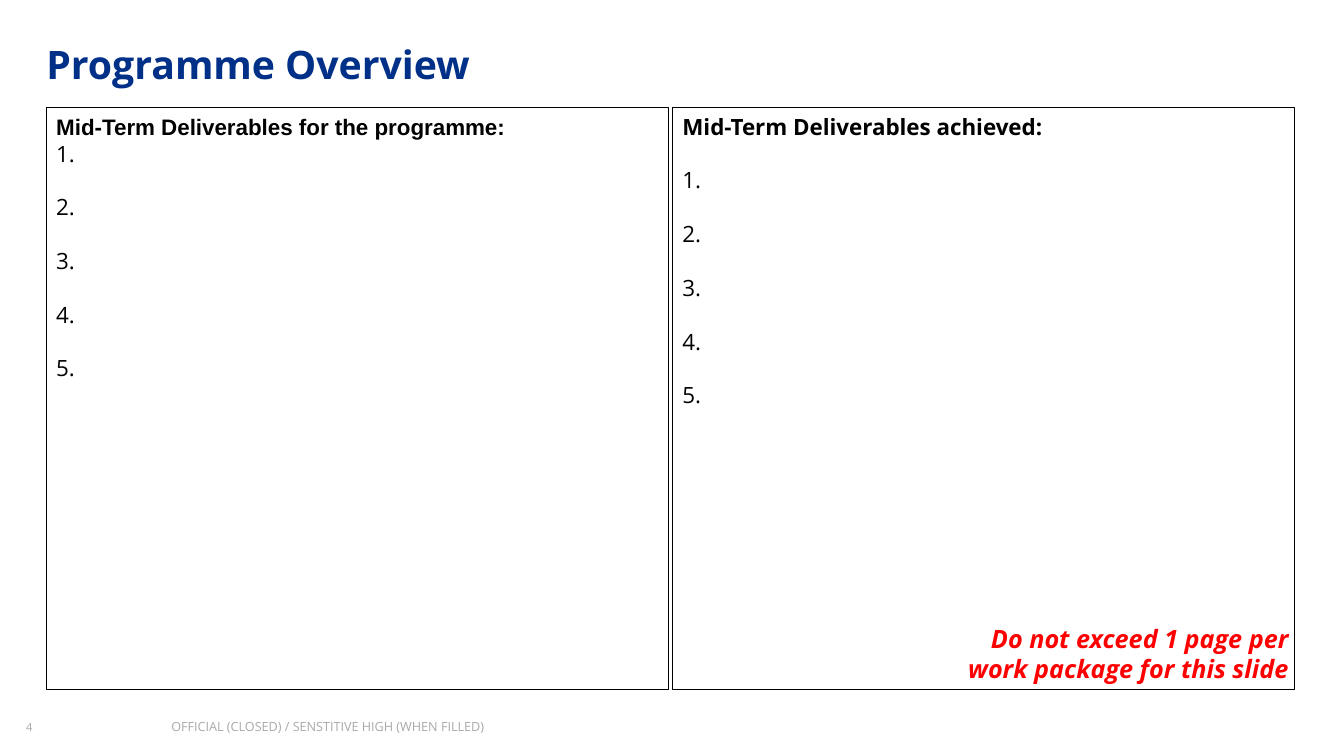
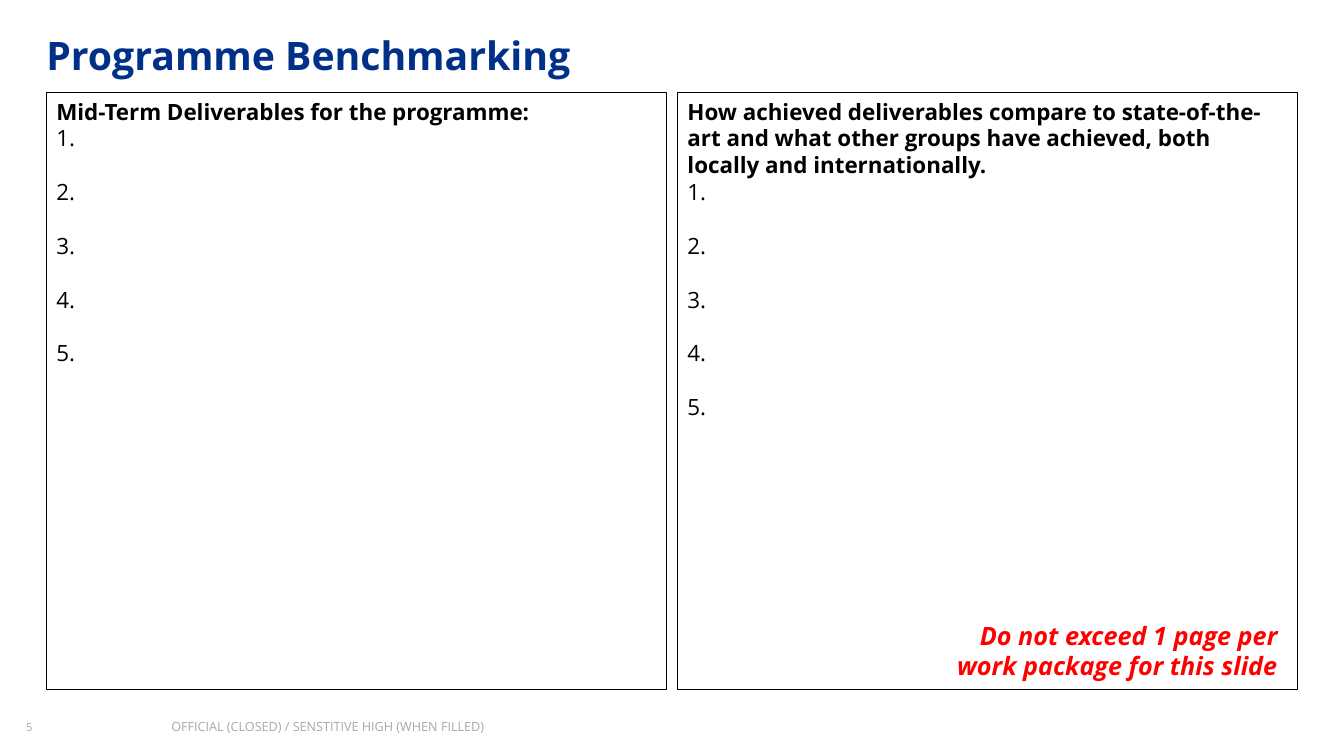
from pptx import Presentation, util as u
from pptx.dml.color import RGBColor
from pptx.enum import shapes, text

HUES = {"title": "003087", "ink": "000000", "note": "FF0000", "foot": "ABA8A8"}
FONT = "Open Sans"
PX = 9144  # 100 px to the inch
GAP = 19.2  # one line of list text, in points
MARK = "OFFICIAL (CLOSED) / SENSTITIVE HIGH (WHEN FILLED)"
NOTE = "Do not exceed 1 page per work package for this slide"
GOALS = "Mid-Term Deliverables for the programme:"
ITEMS = [f"{n}." for n in range(1, 6)]


def write(para, words, size=16, hue="ink", bold=False, italic=False,
          font=FONT, align=text.PP_ALIGN.LEFT, before=0, lines=None):
    """Put one formatted run into a paragraph."""
    para.alignment = align
    para.space_before = u.Pt(before)
    if lines:
        para.line_spacing = lines
    run = para.add_run()
    run.text = words
    face = run.font
    face.name, face.size = font, u.Pt(size)
    face.bold, face.italic = bold, italic
    face.color.rgb = RGBColor.from_string(HUES[hue])


class Deck:
    def __init__(self):
        self.prs = Presentation()
        self.prs.slide_width, self.prs.slide_height = self.px(1333, 750)
        self.slide = None

    def px(self, *sizes):
        return [u.Emu(size * PX) for size in sizes]

    def frame(self, shape, pad=None):
        """Set up wrapped, top-anchored text; pad is one inset for all sides."""
        body = shape.text_frame
        body.word_wrap = True
        body.auto_size = text.MSO_AUTO_SIZE.NONE
        body.vertical_anchor = text.MSO_ANCHOR.TOP
        if pad is not None:
            body.margin_left = body.margin_right = u.Emu(pad * PX)
            body.margin_top = body.margin_bottom = u.Emu(pad * PX)
        return body

    def label(self, words, box, pad=None, **style):
        shape = self.slide.shapes.add_textbox(*self.px(*box))
        write(self.frame(shape, pad).paragraphs[0], words, **style)

    def page(self, num, title, top):
        """Start a slide with its title, number and marking."""
        self.slide = self.prs.slides.add_slide(self.prs.slide_layouts[5])
        head = self.slide.shapes.title
        head.left, head.top, head.width, head.height = self.px(46, top, 1194, 52)
        write(self.frame(head, 0).paragraphs[0], title, size=28, hue="title",
              bold=True, lines=1.1)
        self.label(str(num), (26, 713, 79, 19), 0, size=8, hue="foot", lines=1.1)
        self.label(MARK, (170, 713, 533, 19), 0, size=9, hue="foot")

    def panel(self, head, box, font=FONT, first=0):
        """Outlined box with a bold heading and a numbered list."""
        shape = self.slide.shapes.add_shape(shapes.MSO_SHAPE.RECTANGLE, *self.px(*box))
        shape.shadow.inherit = False
        shape.fill.background()
        shape.line.color.rgb = RGBColor.from_string(HUES["ink"])
        shape.line.width = u.Pt(0.75)
        body = self.frame(shape)
        write(body.paragraphs[0], head, bold=True, font=font)
        for row, item in enumerate(ITEMS):
            write(body.add_paragraph(), item, before=GAP if row else first)

    def note(self, left, top):
        self.label(NOTE, (left, top, 340, 71), size=18, hue="note", bold=True,
                   italic=True, align=text.PP_ALIGN.RIGHT)


def main():
    deck = Deck()

    # Overview
    deck.page(4, "Programme Overview", 35)
    deck.panel(GOALS, (46, 107, 617, 577), font="Arial")
    deck.panel("Mid-Term Deliverables achieved:", (667, 107, 617, 577), first=GAP)
    deck.note(948, 613)

    # Benchmarking
    deck.page(5, "Programme Benchmarking", 26)
    deck.panel(GOALS, (46, 92, 615, 592))
    deck.panel("How achieved deliverables compare to state-of-the-art and what "
               "other groups have achieved, both locally and internationally.",
               (672, 92, 615, 592))
    deck.note(937, 610)

    deck.prs.save("out.pptx")


if __name__ == "__main__":
    main()
